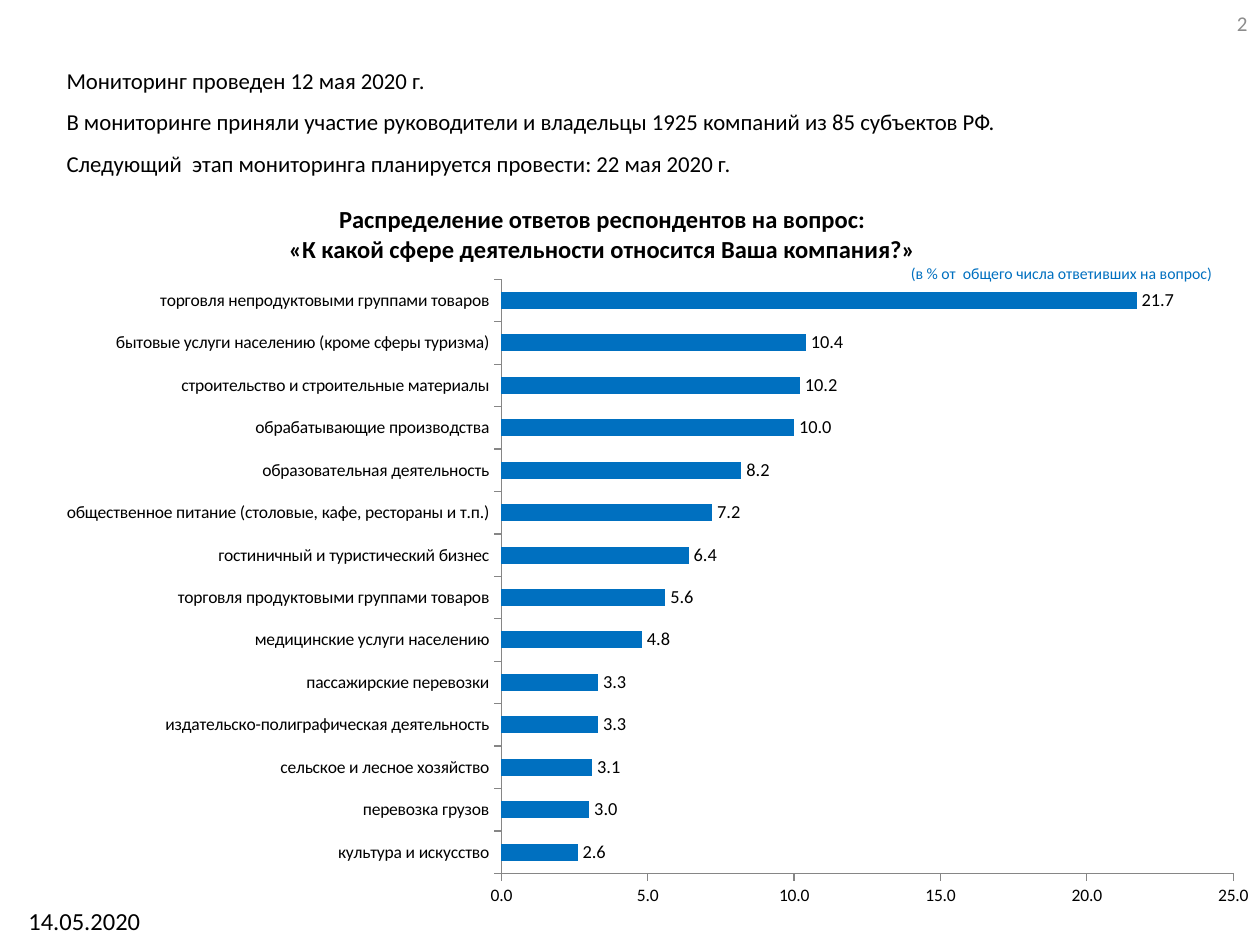
"""Build the survey slide with a bar chart of respondents by field of activity."""
from copy import deepcopy

from lxml import etree
from pptx import Presentation
from pptx.chart.data import CategoryChartData
from pptx.dml.color import RGBColor
from pptx.enum.chart import XL_CHART_TYPE as ChartType, XL_LABEL_POSITION as LabelPosition
from pptx.enum.chart import XL_TICK_MARK as TickMark
from pptx.enum.text import MSO_ANCHOR as Anchor, PP_ALIGN as Align
from pptx.oxml.ns import qn
from pptx.util import Pt

COLORS = {"black": "000000", "blue": "0070C0", "gray": "8C8C8C", "axis": "868686"}
FONT = "Calibri"
ANSWERS = [
    ("культура и искусство", 2.6),
    ("перевозка грузов", 3.0),
    ("сельское и лесное хозяйство", 3.1),
    ("издательско-полиграфическая деятельность", 3.3),
    ("пассажирские перевозки", 3.3),
    ("медицинские услуги населению", 4.8),
    ("торговля продуктовыми группами товаров", 5.6),
    ("гостиничный и туристический бизнес", 6.4),
    ("общественное питание (столовые, кафе, рестораны и т.п.)", 7.2),
    ("образовательная деятельность", 8.2),
    ("обрабатывающие производства", 10.0),
    ("строительство и строительные материалы", 10.2),
    ("бытовые услуги населению (кроме сферы туризма)", 10.4),
    ("торговля непродуктовыми группами товаров", 21.7),
]


def style_font(font, size, color="black", bold=False):
    for name, value in {"name": FONT, "size": Pt(size), "bold": bold}.items():
        setattr(font, name, value)
    font.color.rgb = RGBColor.from_string(COLORS[color])


def fill_box(box, place, lines, size, color="black", align=Align.LEFT,
             anchor=Anchor.TOP, bold=False, wrap=True, after=0, before=0):
    box.left, box.top, box.width, box.height = map(Pt, place)
    frame = box.text_frame
    frame.word_wrap, frame.vertical_anchor = wrap, anchor
    frame.text = "\n".join(lines)
    for para in frame.paragraphs:
        para.alignment = align
        para.space_after, para.space_before = Pt(after), Pt(before)
        for span in para.runs:
            style_font(span.font, size, color, bold)
        for line_break in para._p.findall(qn("a:br")):
            line_break.append(deepcopy(para.runs[0]._r.rPr))


deck = Presentation()
deck.slide_width, deck.slide_height = Pt(720), Pt(540)
page = deck.slides.add_slide(deck.slide_layouts[5])

fill_box(page.shapes.title, (20.16, 104.4, 648, 58.32),
         ["Распределение ответов респондентов на вопрос:\v"
          "«К какой сфере деятельности относится Ваша компания?»"],
         14, align=Align.CENTER, anchor=Anchor.MIDDLE, bold=True)

data = CategoryChartData(number_format="0.0")
data.categories = [name for name, share in ANSWERS]
data.add_series("Доля ответов", [share for name, share in ANSWERS])
chart = page.shapes.add_chart(ChartType.BAR_CLUSTERED, Pt(25.2), Pt(148.32),
                              Pt(696.96), Pt(377.28), data).chart
chart.has_legend = chart.has_title = False
style_font(chart.font, 18)

for axis in (chart.category_axis, chart.value_axis):
    axis.has_major_gridlines = False
    axis.major_tick_mark = TickMark.OUTSIDE
    style_font(axis.tick_labels.font, 10)
    axis.format.line.color.rgb = RGBColor.from_string(COLORS["axis"])
    axis.format.line.width = Pt(0.75)
for name, value in {"minimum_scale": 0, "maximum_scale": 25, "major_unit": 5}.items():
    setattr(chart.value_axis, name, value)
chart.value_axis.tick_labels.number_format = "0.0"
chart.value_axis.tick_labels.number_format_is_linked = False

plot = chart.plots[0]
plot.gap_width, plot.vary_by_categories = 150, False
plot.has_data_labels = True
for name, value in {"show_value": True, "number_format": "0.0",
                    "number_format_is_linked": False,
                    "position": LabelPosition.OUTSIDE_END}.items():
    setattr(plot.data_labels, name, value)
style_font(plot.data_labels.font, 10.5)
bars = plot.series[0].format.fill
bars.solid()
bars.fore_color.rgb = RGBColor.from_string(COLORS["blue"])

plot_area = chart._chartSpace.chart.plotArea
for old_layout in plot_area.findall(qn("c:layout")):
    plot_area.remove(old_layout)
layout = etree.Element(qn("c:layout"))
manual = etree.SubElement(layout, qn("c:manualLayout"))
for tag, value in {"layoutTarget": "inner", "xMode": "edge", "yMode": "edge",
                   "x": 0.375, "y": 0.03, "w": 0.6, "h": 0.9}.items():
    etree.SubElement(manual, qn(f"c:{tag}")).set("val", str(value))
plot_area.insert(0, layout)

TEXTS = [
    {"place": (513.36, 146.88, 187.92, 18), "size": 9, "color": "blue", "wrap": False,
     "lines": ["(в % от  общего числа ответивших на вопрос)"]},
    {"place": (30.96, 34.56, 657.36, 70.56), "size": 13, "align": Align.JUSTIFY, "after": 8,
     "lines": ["Мониторинг проведен 12 мая 2020 г.",
               "В мониторинге приняли участие руководители и владельцы "
               "1925 компаний из 85 субъектов РФ.",
               "Следующий  этап мониторинга планируется провести: 22 мая 2020 г."]},
    {"place": (552.24, -1.44, 167.76, 28.8), "size": 12, "color": "gray",
     "align": Align.RIGHT, "anchor": Anchor.MIDDLE, "lines": ["2"]},
    {"place": (0, 514.08, 96.48, 25.92), "size": 14, "align": Align.CENTER,
     "before": 2.8, "lines": ["14.05.2020"]},
]
for text in TEXTS:
    fill_box(page.shapes.add_textbox(0, 0, 0, 0), **text)

deck.save("out.pptx")
